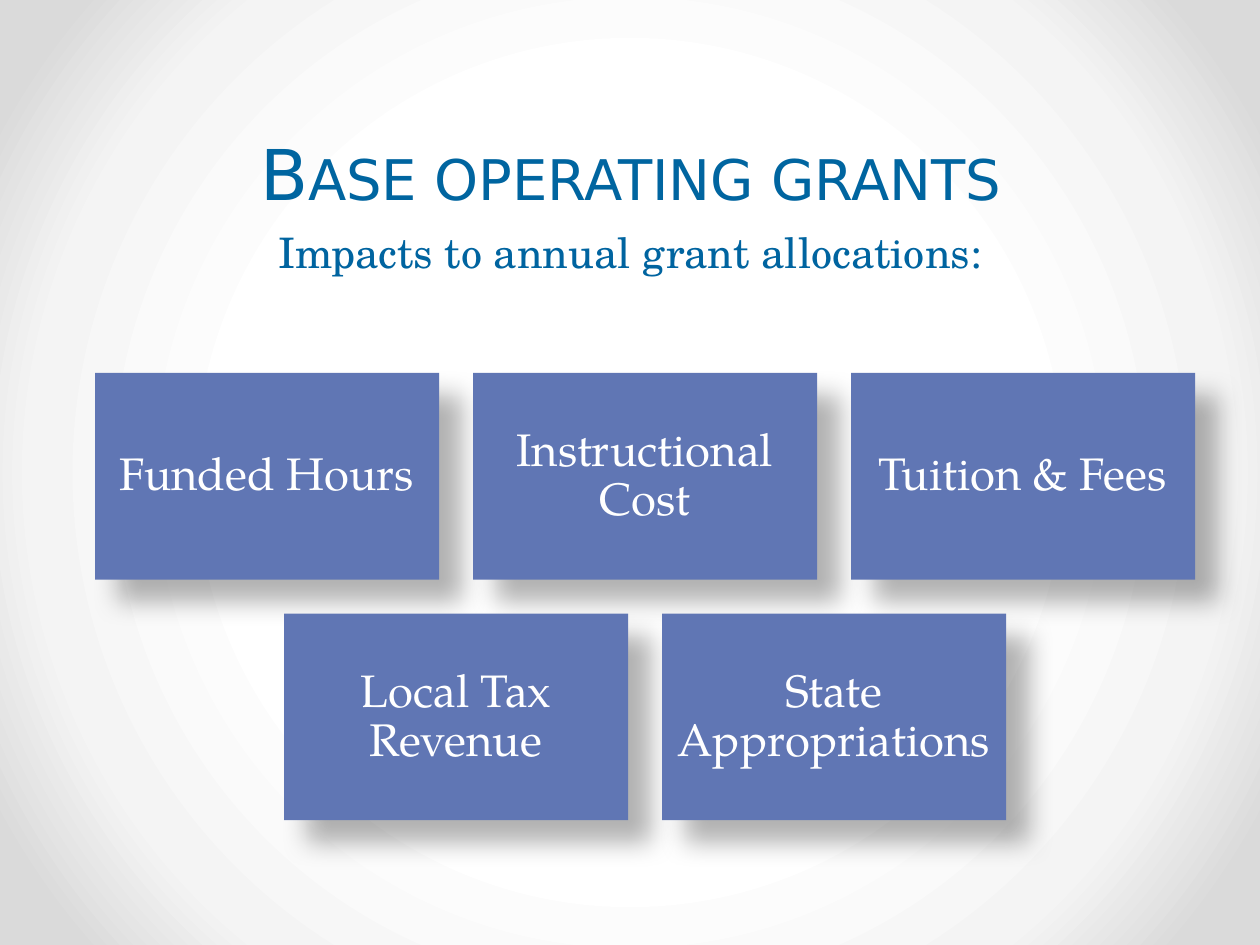
from lxml.etree import SubElement
from pptx import Presentation
from pptx.dml.color import RGBColor
from pptx.enum.shapes import MSO_SHAPE
from pptx.enum.text import MSO_ANCHOR, PP_ALIGN
from pptx.oxml import parse_xml
from pptx.oxml.ns import nsdecls, qn
from pptx.util import Inches, Pt


def color(hex_value):
    return RGBColor.from_string(hex_value)


def write_centered(shape, text, font_name, size, hex_value, anchor):
    text_frame = shape.text_frame
    text_frame.word_wrap = True
    text_frame.vertical_anchor = anchor
    text_frame.text = text
    paragraph = text_frame.paragraphs[0]
    paragraph.alignment = PP_ALIGN.CENTER
    font = paragraph.runs[0].font
    font.name = font_name
    font.size = Pt(size)
    font.color.rgb = color(hex_value)
    return paragraph


presentation = Presentation()
presentation.slide_width = Inches(10)
presentation.slide_height = Inches(7.5)
slide = presentation.slides.add_slide(presentation.slide_layouts[6])

# Radial background, white in the middle
slide.background.fill.gradient()
gradient = slide.element.xpath(".//p:bgPr/a:gradFill")[0]
stops = "".join(
    f'<a:gs pos="{percent * 1000}"><a:srgbClr val="{hex_value}"/></a:gs>'
    for percent, hex_value in [(50, "FFFFFF"), (76, "F4F4F4"), (92, "DADADA")]
)
gradient.getparent().replace(gradient, parse_xml(
    f'<a:gradFill {nsdecls("a")} rotWithShape="1"><a:gsLst>{stops}</a:gsLst>'
    '<a:path path="circle"><a:fillToRect l="50000" t="50000" r="50000" b="50000"/>'
    '</a:path></a:gradFill>'
))

# Headings
title = slide.shapes.add_textbox(Inches(0.51), Inches(0.29), Inches(8.99), Inches(1.46))
paragraph = write_centered(title, "Base operating grants", "DejaVu Sans", 40, "0065A0",
                           MSO_ANCHOR.BOTTOM)
paragraph.line_spacing = Pt(58)
paragraph.runs[0]._r.get_or_add_rPr().set("cap", "small")

subtitle = slide.shapes.add_textbox(Inches(0.5), Inches(1.75), Inches(9), Inches(0.6))
write_centered(subtitle, "Impacts to annual grant allocations:", "TeX Gyre Schola", 24,
               "0064A0", MSO_ANCHOR.TOP)

# Factor boxes, each row centered on the same axis
rows = [
    ["Funded Hours", "Instructional Cost", "Tuition & Fees"],
    ["Local Tax Revenue", "State Appropriations"],
]
box_width, box_height, gap = 2.73, 1.64, 0.27
center_x, first_top = 5.12, 2.96

for row_index, labels in enumerate(rows):
    row_width = len(labels) * (box_width + gap) - gap
    top = first_top + row_index * (box_height + gap)
    for column_index, label in enumerate(labels):
        left = center_x - row_width / 2 + column_index * (box_width + gap)
        box = slide.shapes.add_shape(MSO_SHAPE.RECTANGLE, Inches(left), Inches(top),
                                     Inches(box_width), Inches(box_height))
        box.fill.solid()
        box.fill.fore_color.rgb = color("6076B4")
        box.line.fill.background()

        box.shadow.inherit = False
        effects = box.element.spPr.find(qn("a:effectLst"))
        shadow = SubElement(effects, qn("a:outerShdw"), blurRad=str(Pt(15)),
                            dist=str(Pt(18)), dir=str(45 * 60000), rotWithShape="0")
        shadow_color = SubElement(shadow, qn("a:srgbClr"), val="000000")
        SubElement(shadow_color, qn("a:alpha"), val="30000")

        text_frame = box.text_frame
        text_frame.margin_left = text_frame.margin_right = Inches(0.11)
        text_frame.margin_top = text_frame.margin_bottom = Inches(0.11)
        paragraph = write_centered(box, label, "TeX Gyre Pagella", 26, "FFFFFF",
                                   MSO_ANCHOR.MIDDLE)
        paragraph.line_spacing = 0.9

presentation.save("out.pptx")
